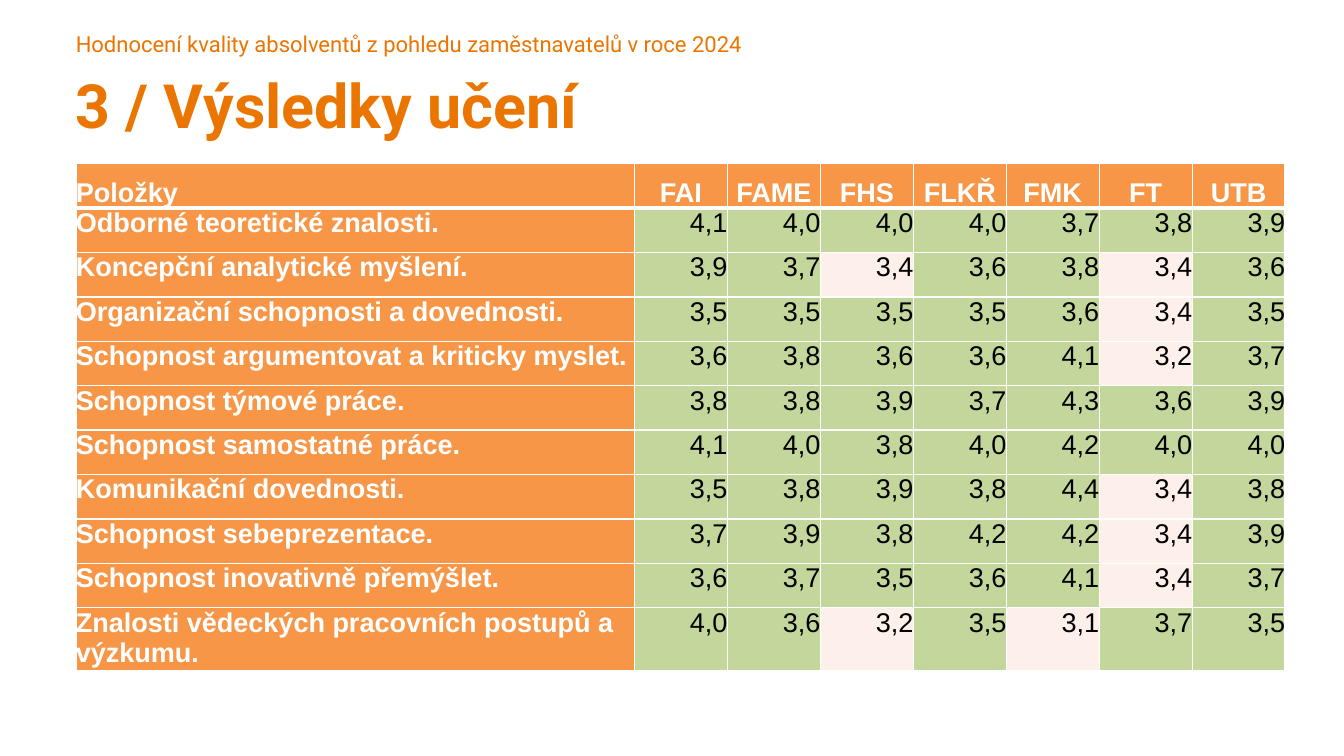
from lxml import etree
from pptx import Presentation
from pptx.dml.color import RGBColor
from pptx.enum.text import MSO_ANCHOR, MSO_AUTO_SIZE, PP_ALIGN
from pptx.oxml.ns import qn
from pptx.util import Pt

LEFT, CENTER, RIGHT = PP_ALIGN.LEFT, PP_ALIGN.CENTER, PP_ALIGN.RIGHT
TOP, BOTTOM = MSO_ANCHOR.TOP, MSO_ANCHOR.BOTTOM
NO_AUTOFIT = MSO_AUTO_SIZE.NONE
TITLE_ONLY = 5

KICKER = "Hodnocení kvality absolventů z pohledu zaměstnavatelů v roce 2024"
TITLE = "3 / Výsledky učení"
HEADER = ["Položky", "FAI", "FAME", "FHS", "FLKŘ", "FMK", "FT", "UTB"]
RATINGS = [
    ("Odborné teoretické znalosti.", "4,1 4,0 4,0 4,0 3,7 3,8 3,9"),
    ("Koncepční analytické myšlení.", "3,9 3,7 3,4 3,6 3,8 3,4 3,6"),
    ("Organizační schopnosti a dovednosti.", "3,5 3,5 3,5 3,5 3,6 3,4 3,5"),
    ("Schopnost argumentovat a kriticky myslet.", "3,6 3,8 3,6 3,6 4,1 3,2 3,7"),
    ("Schopnost týmové práce.", "3,8 3,8 3,9 3,7 4,3 3,6 3,9"),
    ("Schopnost samostatné práce.", "4,1 4,0 3,8 4,0 4,2 4,0 4,0"),
    ("Komunikační dovednosti.", "3,5 3,8 3,9 3,8 4,4 3,4 3,8"),
    ("Schopnost sebeprezentace.", "3,7 3,9 3,8 4,2 4,2 3,4 3,9"),
    ("Schopnost inovativně přemýšlet.", "3,6 3,7 3,5 3,6 4,1 3,4 3,7"),
    ("Znalosti vědeckých pracovních postupů a výzkumu.",
     "4,0 3,6 3,2 3,5 3,1 3,7 3,5"),
]
THRESHOLD = 3.5

ACCENT, WHITE, BLACK = "EA7500", "FFFFFF", "000000"
ORANGE, GREEN, PINK = "F79646", "C3D69B", "FDEFE9"

MARGIN = 44.8
TABLE_TOP = 96.6
ITEM_WIDTH, RATING_WIDTH = 329.8, 54.9
ROW_HEIGHT, LAST_ROW_HEIGHT = 26.24, 37.5
TABLE_WIDTH = ITEM_WIDTH + RATING_WIDTH * (len(HEADER) - 1)
TABLE_HEIGHT = ROW_HEIGHT * len(RATINGS) + LAST_ROW_HEIGHT


def color(value):
    return RGBColor.from_string(value)


def set_paragraph(para, text, font_name, size, ink, bold=False, align=LEFT):
    para.text = text
    para.alignment = align
    font = para.font
    font.name, font.size, font.bold = font_name, Pt(size), bold
    font.color.rgb = color(ink)


def fill_heading(shape, top, height, text, size, bold=False):
    shape.left, shape.top = Pt(MARGIN), Pt(top)
    shape.width, shape.height = Pt(TABLE_WIDTH), Pt(height)
    frame = shape.text_frame
    frame.word_wrap = True
    frame.auto_size = NO_AUTOFIT
    frame.vertical_anchor = TOP
    frame.margin_left = frame.margin_right = 0
    frame.margin_top = frame.margin_bottom = 0
    set_paragraph(frame.paragraphs[0], text, "Roboto", size, ACCENT, bold)


def set_borders(cell, widths):
    """Draw white cell borders, with widths in points by side letter."""
    properties = cell._tc.get_or_add_tcPr()
    for index, (side, width) in enumerate(widths.items()):
        line = etree.Element(qn(f"a:ln{side}"), w=str(int(Pt(width))))
        fill = etree.SubElement(line, qn("a:solidFill"))
        etree.SubElement(fill, qn("a:srgbClr"), val=WHITE)
        properties.insert(index, line)


def fill_cell(cell, text, row, column):
    is_header, is_item = row == 0, column == 0
    if is_header or is_item:
        background = ORANGE
    else:
        background = PINK if float(text.replace(",", ".")) < THRESHOLD else GREEN
    labelled = is_header or is_item
    align = LEFT if is_item else CENTER if is_header else RIGHT
    cell.margin_left = cell.margin_right = 0
    cell.margin_top = cell.margin_bottom = 0
    cell.vertical_anchor = BOTTOM if is_header else TOP
    cell.fill.solid()
    cell.fill.fore_color.rgb = color(background)
    set_paragraph(cell.text_frame.paragraphs[0], text, "Arial", 16,
                  WHITE if labelled else BLACK, labelled, align)
    set_borders(cell, {"L": 1, "R": 1, "T": 3 if row == 1 else 1,
                       "B": 3 if is_header else 1})


def add_ratings_table(page):
    rows = [HEADER] + [[item, *values.split()] for item, values in RATINGS]
    table = page.shapes.add_table(
        len(rows), len(HEADER), Pt(MARGIN), Pt(TABLE_TOP),
        Pt(TABLE_WIDTH), Pt(TABLE_HEIGHT)).table
    for index, column in enumerate(table.columns):
        column.width = Pt(RATING_WIDTH if index else ITEM_WIDTH)
    for row in table.rows:
        row.height = Pt(ROW_HEIGHT)
    table.rows[len(rows) - 1].height = Pt(LAST_ROW_HEIGHT)
    for row, texts in enumerate(rows):
        for column, text in enumerate(texts):
            fill_cell(table.cell(row, column), text, row, column)


def main():
    deck = Presentation()
    deck.slide_width, deck.slide_height = Pt(793.44), Pt(446.4)
    page = deck.slides.add_slide(deck.slide_layouts[TITLE_ONLY])
    fill_heading(page.shapes.title, 39.6, 50, TITLE, 36, bold=True)
    add_ratings_table(page)
    kicker = page.shapes.add_textbox(0, 0, 0, 0)
    fill_heading(kicker, 18, 16, KICKER, 13)
    deck.save("out.pptx")


if __name__ == "__main__":
    main()
